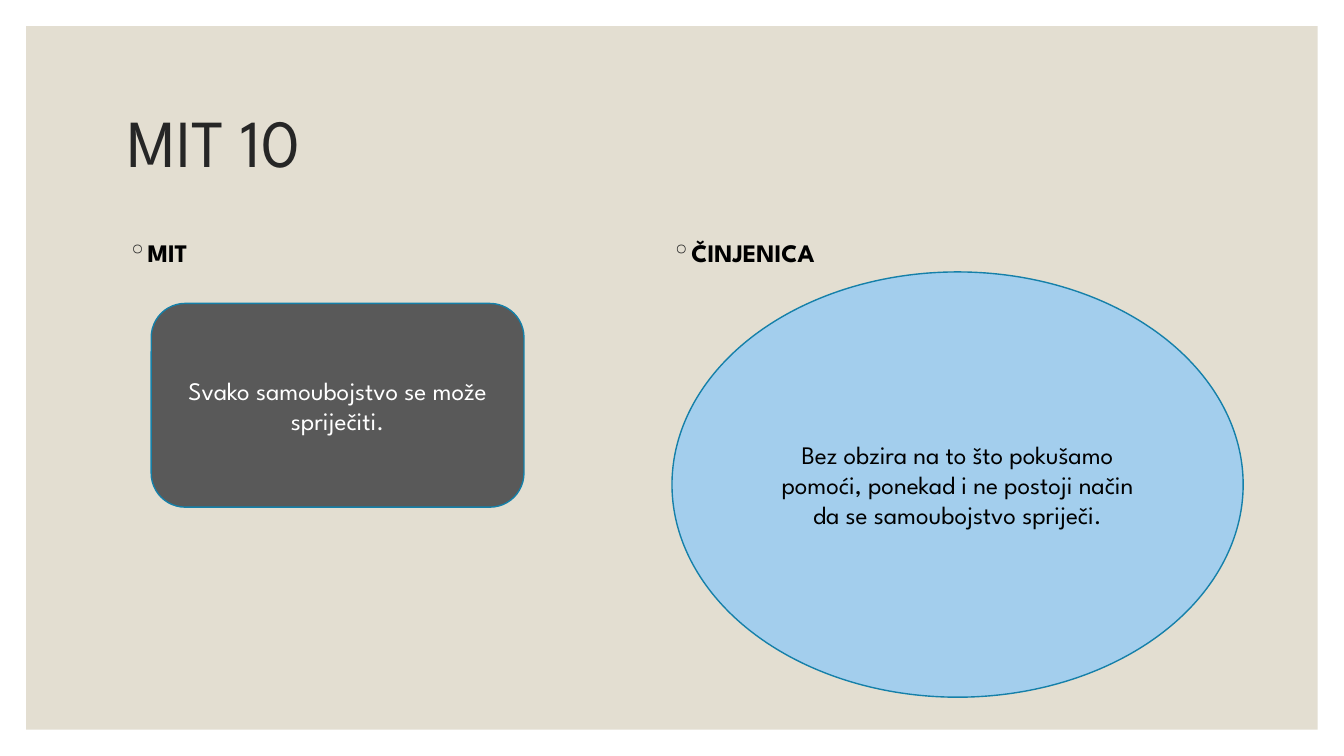
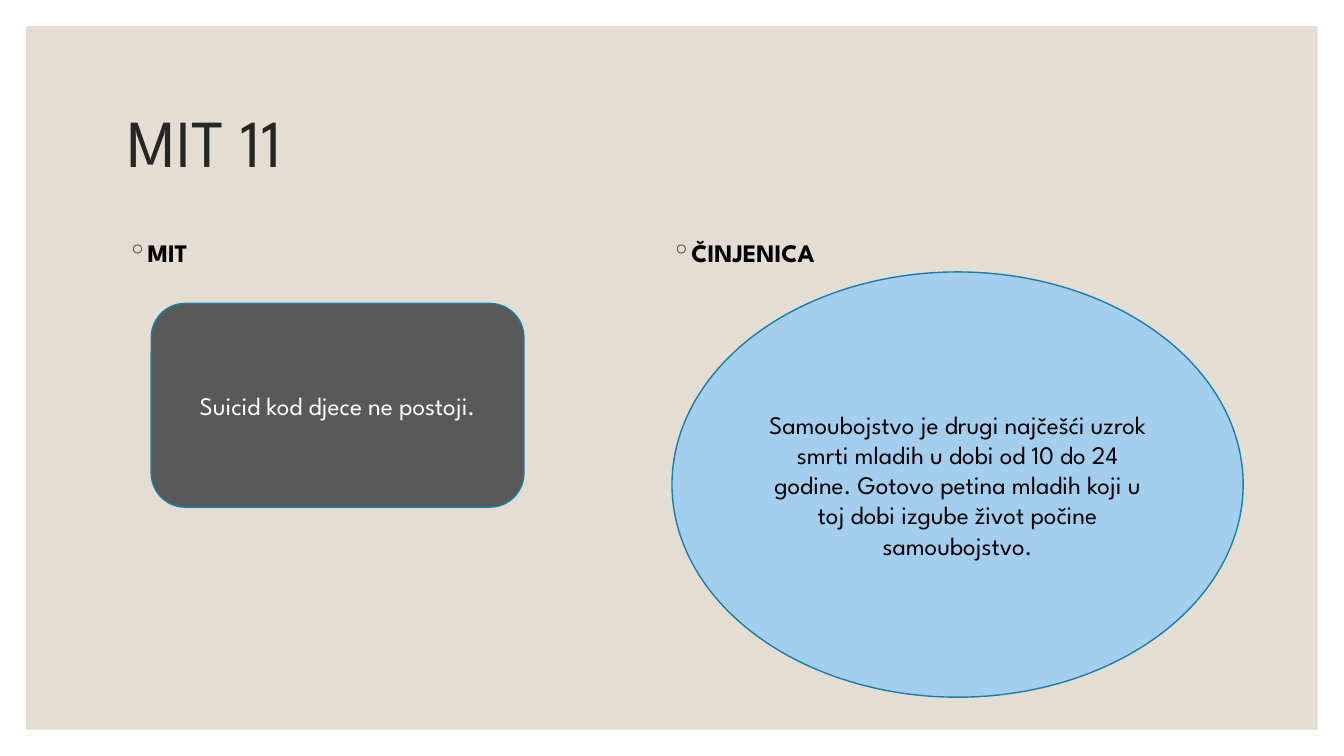
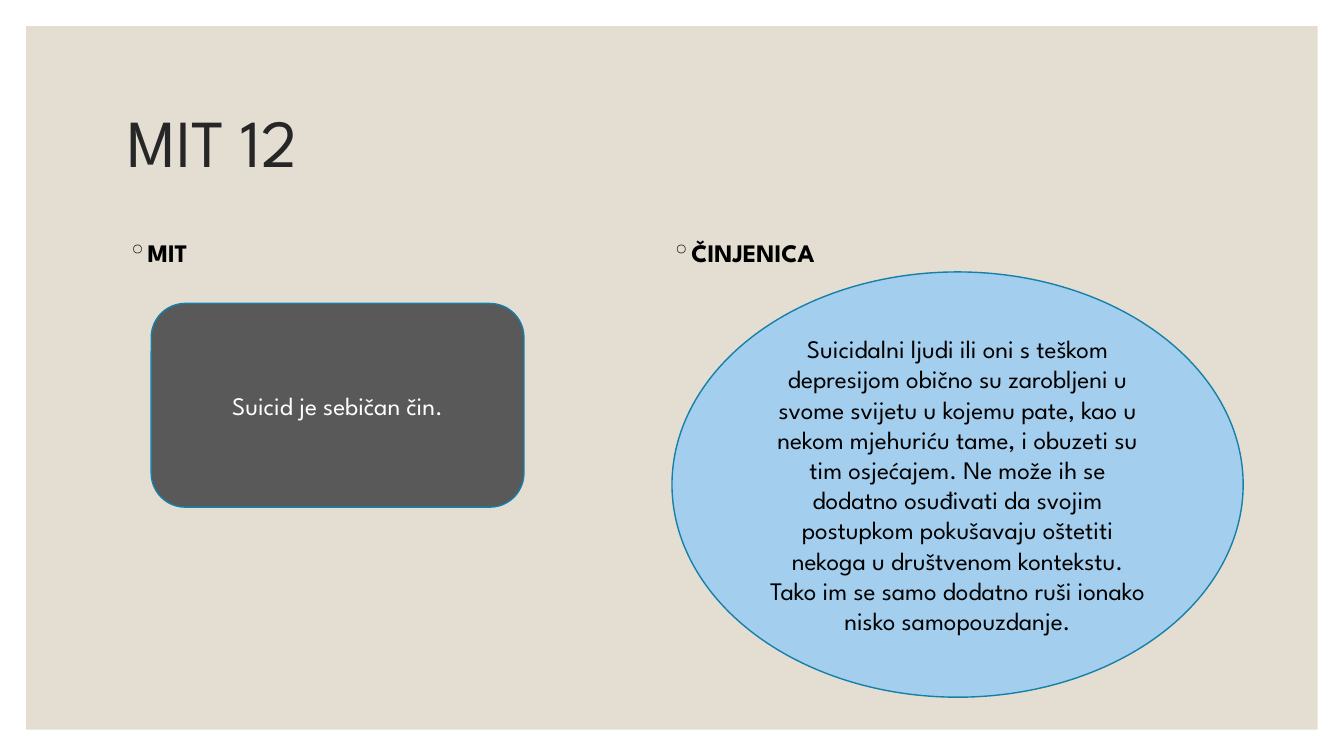
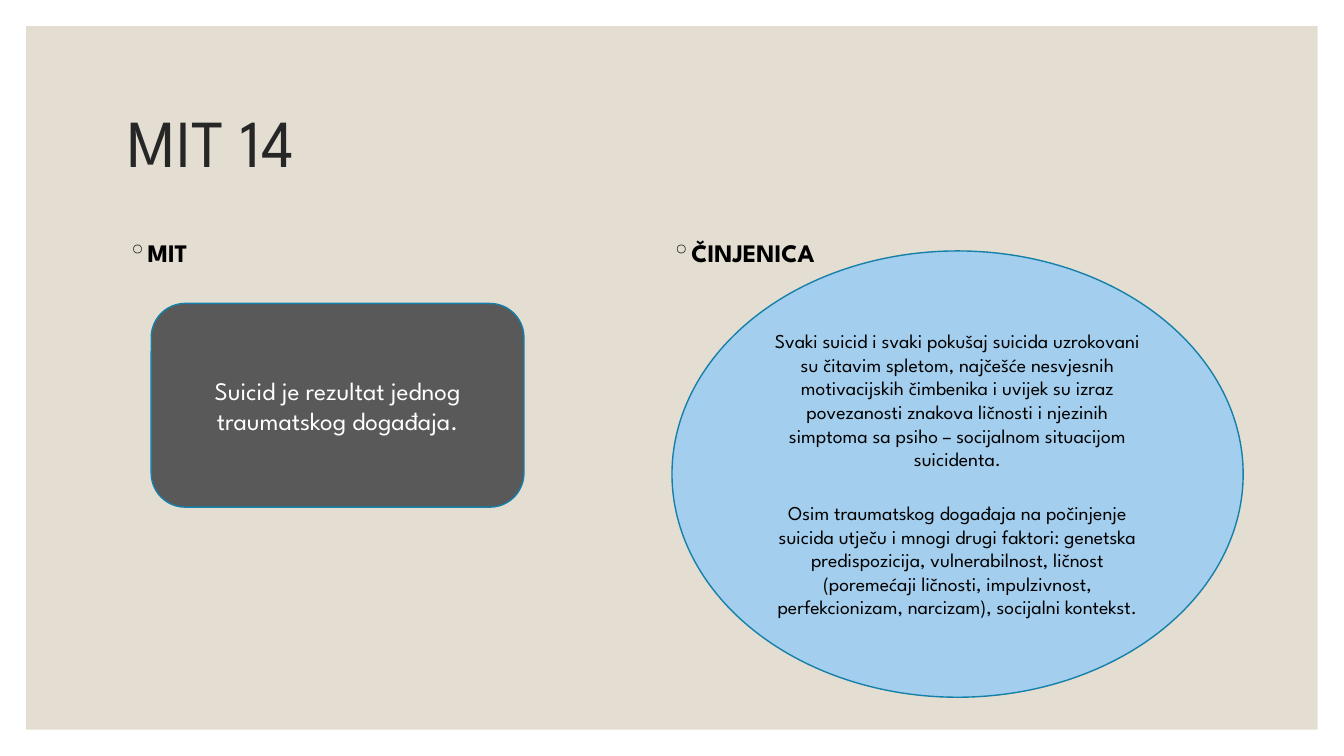
from pptx import Presentation
from pptx.dml.color import RGBColor
from pptx.enum.shapes import MSO_SHAPE
from pptx.enum.text import MSO_ANCHOR, PP_ALIGN
from pptx.oxml.ns import qn
from pptx.util import Pt
from lxml.etree import SubElement

PX = 9525
FONT = "League Spartan"
COLORS = {
    "panel": "E3DED1",
    "title": "262626",
    "myth": "595959",
    "fact": "A3CEED",
    "outline": "1580A9",
    "dark": "000000",
    "light": "FFFFFF",
}
SLIDE_WIDTH, SLIDE_HEIGHT = 1280, 720
PANEL_MARGIN = 25
LEFT, CONTENT_WIDTH = 112, 1056
COLUMN_WIDTH = 518
FACT_BOTTOM = 664
MYTHS = [
    {
        "number": 10,
        "myth": "Svako samoubojstvo se može spriječiti.",
        "fact": ["Bez obzira na to što pokušamo pomoći, ponekad i ne postoji način da se samoubojstvo spriječi."],
    },
    {
        "number": 11,
        "myth": "Suicid kod djece ne postoji.",
        "fact": [
            "Samoubojstvo je drugi najčešći uzrok smrti mladih u dobi od 10 do 24 godine. "
            "Gotovo petina mladih koji u toj dobi izgube život počine samoubojstvo."
        ],
    },
    {
        "number": 12,
        "myth": "Suicid je sebičan čin.",
        "fact": [
            "Suicidalni ljudi ili oni s teškom depresijom obično su zarobljeni u svome svijetu u kojemu pate, "
            "kao u nekom mjehuriću tame, i obuzeti su tim osjećajem. Ne može ih se dodatno osuđivati da svojim "
            "postupkom pokušavaju oštetiti nekoga u društvenom kontekstu. "
            "Tako im se samo dodatno ruši ionako nisko samopouzdanje."
        ],
    },
    {
        "number": 14,
        "myth": "Suicid je rezultat jednog traumatskog događaja.",
        "fact": [
            "Svaki suicid i svaki pokušaj suicida uzrokovani su čitavim spletom, najčešće nesvjesnih motivacijskih "
            "čimbenika i uvijek su izraz povezanosti znakova ličnosti i njezinih simptoma sa psiho – socijalnom "
            "situacijom suicidenta.",
            "Osim traumatskog događaja na počinjenje suicida utječu i mnogi drugi faktori: genetska predispozicija, "
            "vulnerabilnost, ličnost (poremećaji ličnosti, impulzivnost, perfekcionizam, narcizam), "
            "socijalni kontekst.",
        ],
        "fact_top": 239,
        "fact_size": 14,
    },
]


class Deck:
    """Holds the shared style and the slide being built."""

    def __init__(self):
        self.presentation = Presentation()
        self.presentation.slide_width = SLIDE_WIDTH * PX
        self.presentation.slide_height = SLIDE_HEIGHT * PX
        self.slide = None

    def new_slide(self):
        self.slide = self.presentation.slides.add_slide(self.presentation.slide_layouts[6])
        self.shape(
            MSO_SHAPE.RECTANGLE,
            (PANEL_MARGIN, PANEL_MARGIN, SLIDE_WIDTH - 2 * PANEL_MARGIN, SLIDE_HEIGHT - 2 * PANEL_MARGIN),
            "panel",
        )

    def shape(self, kind, box, fill, outline=None):
        shape = self.slide.shapes.add_shape(kind, *(length * PX for length in box))
        shape.shadow.inherit = False
        shape.fill.solid()
        shape.fill.fore_color.rgb = RGBColor.from_string(COLORS[fill])
        if outline:
            shape.line.color.rgb = RGBColor.from_string(COLORS[outline])
            shape.line.width = Pt(1)
        else:
            shape.line.fill.background()
        return shape

    def fill_text(self, frame, texts, size, color, align=PP_ALIGN.LEFT, bold=False, gap=0):
        frame.word_wrap = True
        for index, text in enumerate(texts):
            paragraph = frame.add_paragraph() if index else frame.paragraphs[0]
            paragraph.text = text
            paragraph.alignment = align
            paragraph.space_before = Pt(gap if index else 0)
            paragraph.font.name = FONT
            paragraph.font.size = Pt(size)
            paragraph.font.bold = bold
            paragraph.font.color.rgb = RGBColor.from_string(COLORS[color])

    def text_box(self, box, text, size, color, anchor=MSO_ANCHOR.TOP, bold=False):
        frame = self.slide.shapes.add_textbox(*(length * PX for length in box)).text_frame
        frame.vertical_anchor = anchor
        self.fill_text(frame, [text], size, color, bold=bold)
        return frame.paragraphs[0]

    def title(self, text):
        paragraph = self.text_box((LEFT, 67, CONTENT_WIDTH, 144), text, 48, "title", MSO_ANCHOR.MIDDLE)
        paragraph.line_spacing = 0.9

    def heading(self, column, text):
        box = (LEFT + column * COLUMN_WIDTH, 221, COLUMN_WIDTH, 40)
        paragraph = self.text_box(box, text, 18, "dark", bold=True)
        properties = paragraph._p.get_or_add_pPr()
        properties.set("marL", str(19 * PX))
        properties.set("indent", str(-19 * PX))
        bullet_color = SubElement(properties, qn("a:buClr"))
        SubElement(bullet_color, qn("a:srgbClr"), val=COLORS["title"])
        SubElement(properties, qn("a:buChar"), char="◦")
        properties.append(properties.find(qn("a:defRPr")))

    def statement(self, kind, box, fill, texts, color, size=18):
        frame = self.shape(kind, box, fill, "outline").text_frame
        frame.vertical_anchor = MSO_ANCHOR.MIDDLE
        self.fill_text(frame, texts, size, color, PP_ALIGN.CENTER, gap=22)

    def myth_slide(self, number, myth, fact, fact_top=259, fact_size=18):
        self.new_slide()
        self.title(f"MIT {number}")
        for column, text in enumerate(("MIT", "ČINJENICA")):
            self.heading(column, text)
        self.statement(MSO_SHAPE.ROUNDED_RECTANGLE, (144, 289, 355, 194), "myth", [myth], "light")
        fact_box = (640, fact_top, 544, FACT_BOTTOM - fact_top)
        self.statement(MSO_SHAPE.OVAL, fact_box, "fact", fact, "dark", fact_size)


def main():
    deck = Deck()
    for myth in MYTHS:
        deck.myth_slide(**myth)
    deck.presentation.save("out.pptx")


if __name__ == "__main__":
    main()
